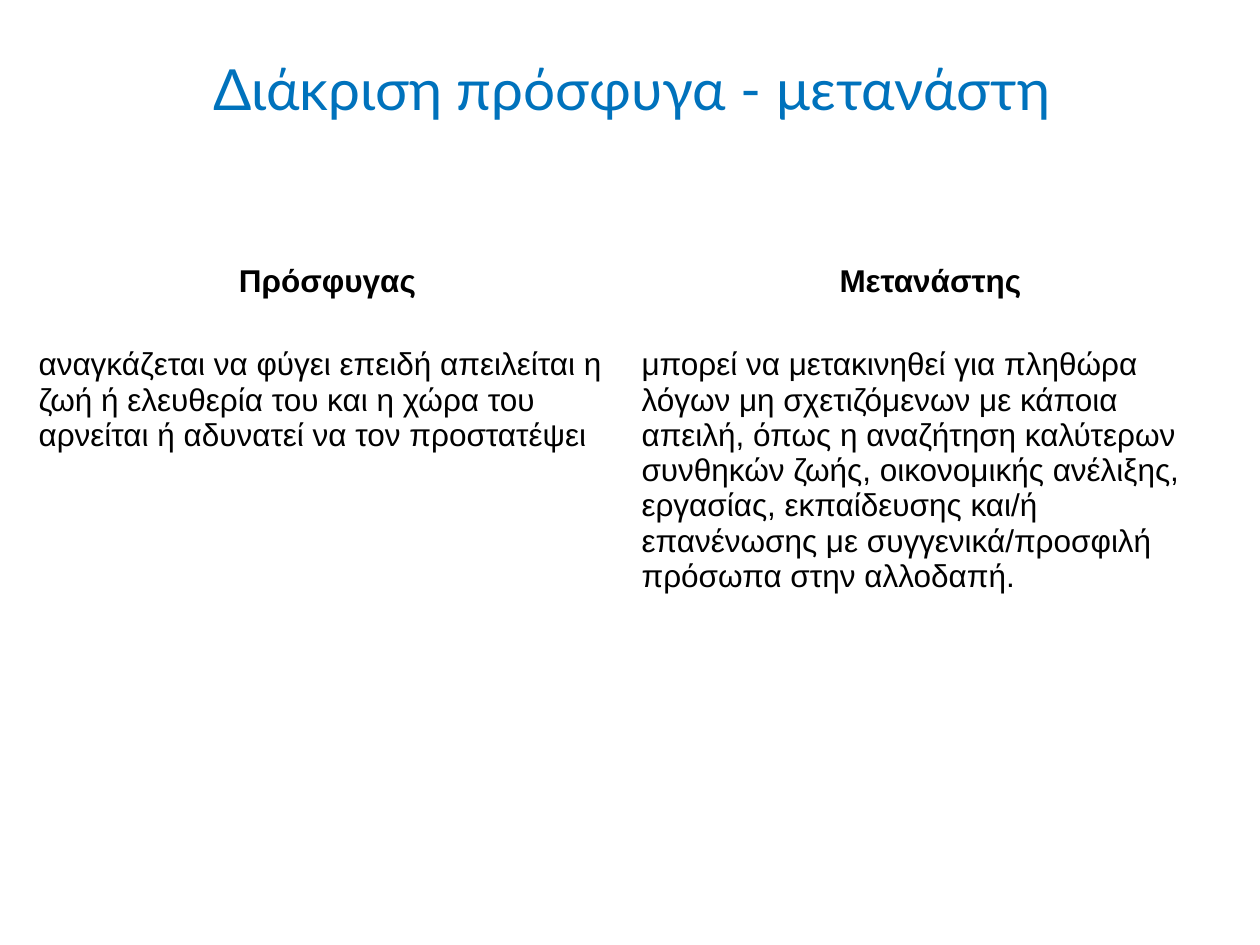
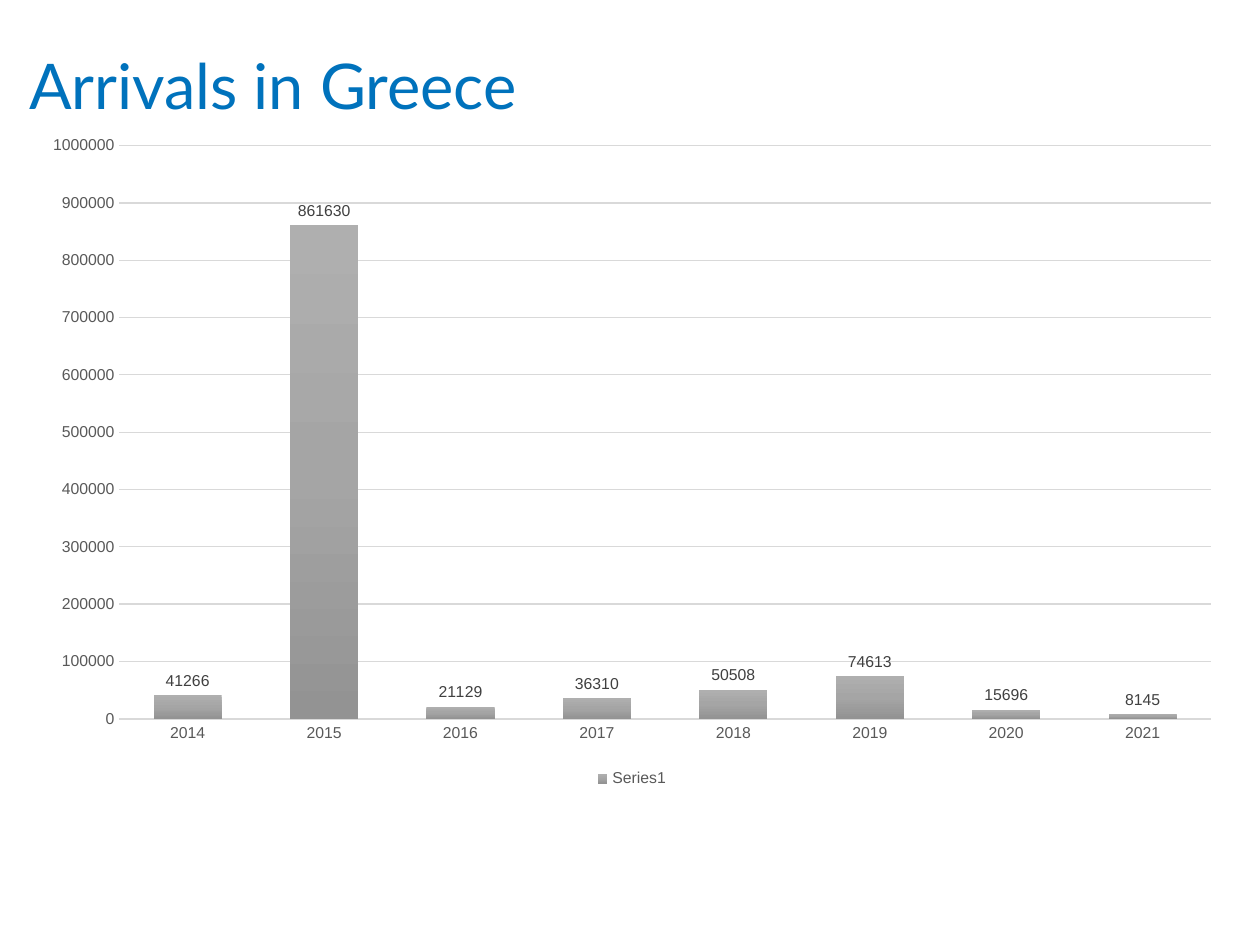
from copy import deepcopy
from pptx import Presentation, util as u
from pptx.chart.data import CategoryChartData
from pptx.dml.color import RGBColor
from pptx.enum import chart as ch, text
from pptx.oxml.ns import qn

PX = 914400 / 126
BLUE, BLACK, GREY, DARK, RULE = "0072BC", "000000", "595959", "404040", "D9D9D9"
HEAD = (29, 38, 1206, 85)
LEFT, MID = text.PP_ALIGN.LEFT, text.PP_ALIGN.CENTER

TERMS = [
    ("Πρόσφυγας",
     "αναγκάζεται να φύγει επειδή απειλείται η ζωή ή ελευθερία του και η "
     "χώρα του αρνείται ή αδυνατεί να τον προστατέψει"),
    ("Μετανάστης",
     "μπορεί να μετακινηθεί για πληθώρα λόγων μη σχετιζόμενων με κάποια "
     "απειλή, όπως η αναζήτηση καλύτερων συνθηκών ζωής, οικονομικής "
     "ανέλιξης, εργασίας, εκπαίδευσης και/ή επανένωσης με "
     "συγγενικά/προσφιλή πρόσωπα στην αλλοδαπή."),
]
ARRIVALS = {"2014": 41266, "2015": 861630, "2016": 21129, "2017": 36310,
            "2018": 50508, "2019": 74613, "2020": 15696, "2021": 8145}
SHADES = [(0, "AFAFAF"), (0.5, "A5A5A5"), (1, "939393")]


def px(*nums):
    return [u.Emu(round(n * PX)) for n in nums]


def rgb(code):
    return RGBColor.from_string(code)


def put(obj, **vals):
    for key, val in vals.items():
        setattr(obj, key, val)


def style(font, size, color, name="Arial", bold=False):
    put(font, size=u.Pt(size), name=name, bold=bold)
    font.color.rgb = rgb(color)


def title(slide, words, size, align):
    frame = slide.shapes.add_textbox(*px(*HEAD)).text_frame
    put(frame, word_wrap=True, vertical_anchor=text.MSO_ANCHOR.BOTTOM,
        margin_left=0, margin_right=0, margin_top=0, margin_bottom=0)
    para = frame.paragraphs[0]
    put(para, text=words, alignment=align, line_spacing=0.9)
    style(para.font, size, BLUE, "Lato")


def terms(slide, box, rows=(83, 282)):
    """Table with one column per term: its name above its meaning."""
    table = slide.shapes.add_table(len(rows), len(TERMS), *px(*box)).table
    put(table, first_row=False, horz_banding=False)
    for row, high in zip(table.rows, px(*rows)):
        row.height = high
    for c, pair in enumerate(TERMS):
        table.columns[c].width = px(box[2] / len(TERMS))[0]
        for r, words in enumerate(pair):
            cell = table.cell(r, c)
            cell.fill.background()
            para = cell.text_frame.paragraphs[0]
            put(para, text=words, alignment=LEFT if r else MID)
            style(para.font, 18, BLACK, bold=r == 0)


def shade(series):
    fill = series.format.fill
    fill.gradient()
    fill.gradient_angle = 270
    stops = series._element.find(".//" + qn("a:gsLst"))
    stops.insert(1, deepcopy(stops[0]))
    for stop, (pos, code) in zip(fill.gradient_stops, SHADES):
        stop.position = pos
        stop.color.rgb = rgb(code)


def rule(line, width):
    line.color.rgb = rgb(RULE)
    line.width = u.Pt(width)


def bars(slide, box):
    data = CategoryChartData()
    data.categories = list(ARRIVALS)
    data.add_series("Series1", list(ARRIVALS.values()))
    chart = slide.shapes.add_chart(
        ch.XL_CHART_TYPE.COLUMN_CLUSTERED, *px(*box), data).chart
    style(chart.font, 10, BLACK)
    put(chart, has_title=False, has_legend=True)
    put(chart.legend, position=ch.XL_LEGEND_POSITION.BOTTOM,
        include_in_layout=False)
    style(chart.legend.font, 9, GREY)

    cats, vals = chart.category_axis, chart.value_axis
    for axis in (cats, vals):
        put(axis, major_tick_mark=ch.XL_TICK_MARK.NONE,
            minor_tick_mark=ch.XL_TICK_MARK.NONE)
        style(axis.tick_labels.font, 9, GREY)
    rule(cats.format.line, 1)
    rule(vals.major_gridlines.format.line, 0.75)
    vals.format.line.fill.background()

    plot = chart.plots[0]
    put(plot, gap_width=100, overlap=-24, vary_by_categories=False,
        has_data_labels=True)
    put(plot.data_labels, show_value=True,
        position=ch.XL_LABEL_POSITION.OUTSIDE_END)
    style(plot.data_labels.font, 9, DARK)
    shade(plot.series[0])


def main():
    deck = Presentation()
    put(deck, slide_width=u.Inches(10), slide_height=u.Inches(7.5))
    blank = deck.slide_layouts[6]

    slide = deck.slides.add_slide(blank)
    title(slide, "Διάκριση πρόσφυγα - μετανάστη", 32.4, MID)
    terms(slide, (26, 258, 1206, 365))

    slide = deck.slides.add_slide(blank)
    title(slide, "Arrivals in Greece", 36, LEFT)
    bars(slide, (29, 123, 1206, 670))

    deck.save("out.pptx")


if __name__ == "__main__":
    main()
